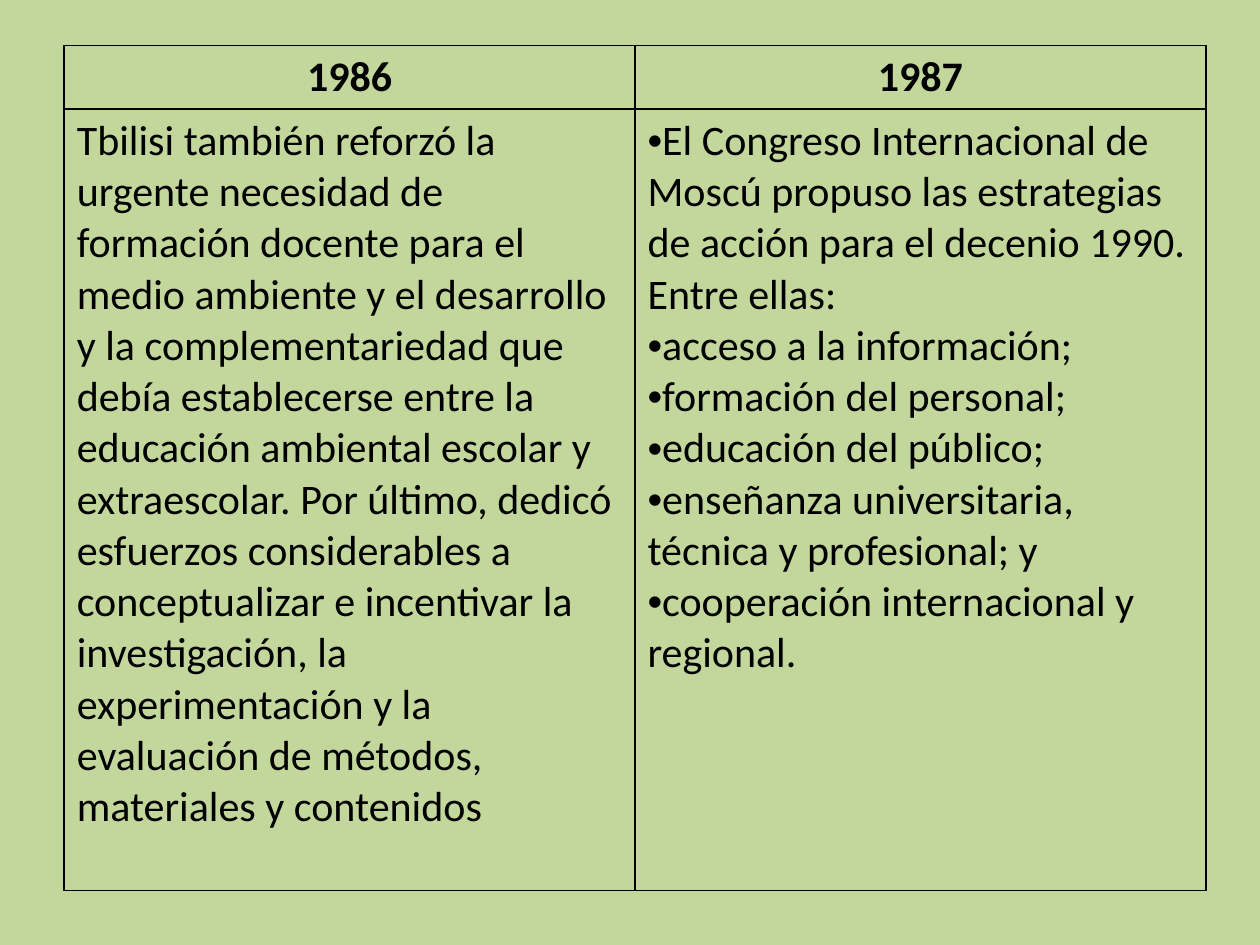
from lxml import etree
from pptx import Presentation, util as u
from pptx.dml.color import RGBColor
from pptx.enum import text
from pptx.oxml import ns

GREEN = RGBColor(0xC3, 0xD6, 0x9B)
BLACK = RGBColor(0x00, 0x00, 0x00)

YEARS = ["1986", "1987"]
TBILISI = [
    "Tbilisi también reforzó la urgente necesidad de formación docente para el "
    "medio ambiente y el desarrollo y la complementariedad que debía establecerse "
    "entre la educación ambiental escolar y extraescolar. Por último, dedicó "
    "esfuerzos considerables a conceptualizar e incentivar la investigación, la "
    "experimentación y la evaluación de métodos, materiales y contenidos"
]
MOSCOW = [
    "El Congreso Internacional de Moscú propuso las estrategias de acción para el "
    "decenio 1990. Entre ellas:",
    "acceso a la información;",
    "formación del personal;",
    "educación del público;",
    "enseñanza universitaria, técnica y profesional; y",
    "cooperación internacional y regional.",
]


class SlideBuilder:
    """Holds the style and current slide; lengths are inches on a 10 by 7.5 page."""

    font, size, line = "Calibri", u.Pt(24), u.Pt(1)

    def __init__(self, prs):
        self.s = prs.slides.add_slide(prs.slide_layouts[6])
        fill = self.s.background.fill
        fill.solid()
        fill.fore_color.rgb = GREEN

    def table(self, left, top, cols, rows):
        sp = self.s.shapes.add_table(
            len(rows), len(cols), u.Inches(left), u.Inches(top),
            u.Inches(sum(cols)), u.Inches(sum(rows)))
        tbl = sp.table
        tbl.horz_banding = False
        for col, width in zip(tbl.columns, cols):
            col.width = u.Inches(width)
        for row, height in zip(tbl.rows, rows):
            row.height = u.Inches(height)
        return tbl

    def borders(self, cell):
        tcPr = cell._tc.get_or_add_tcPr()
        for i, side in enumerate(("lnL", "lnR", "lnT", "lnB")):
            ln = etree.Element(ns.qn(f"a:{side}"), w=str(self.line))
            fill = etree.SubElement(ln, ns.qn("a:solidFill"))
            etree.SubElement(fill, ns.qn("a:srgbClr"), val=str(BLACK))
            tcPr.insert(i, ln)

    def cell(self, cell, lines, heading=False, bullets=False):
        cell.fill.background()
        self.borders(cell)
        tf = cell.text_frame
        tf.text = "\n".join(lines)
        for p in tf.paragraphs:
            p.alignment = text.PP_ALIGN.CENTER if heading else text.PP_ALIGN.LEFT
            if bullets:
                pPr = p._p.get_or_add_pPr()
                etree.SubElement(pPr, ns.qn("a:buFont"), typeface="Arial")
                etree.SubElement(pPr, ns.qn("a:buChar"), char="•")
            for r in p.runs:
                r.font.name, r.font.size, r.font.bold = self.font, self.size, heading
                r.font.color.rgb = BLACK


def main():
    prs = Presentation()
    prs.slide_width, prs.slide_height = u.Inches(10), u.Inches(7.5)
    slide = SlideBuilder(prs)
    tbl = slide.table(0.51, 0.36, cols=[4.53] * 2, rows=[0.5, 6.2])
    for col, year in enumerate(YEARS):
        slide.cell(tbl.cell(0, col), [year], heading=True)
    slide.cell(tbl.cell(1, 0), TBILISI)
    slide.cell(tbl.cell(1, 1), MOSCOW, bullets=True)
    prs.save("out.pptx")


if __name__ == "__main__":
    main()
